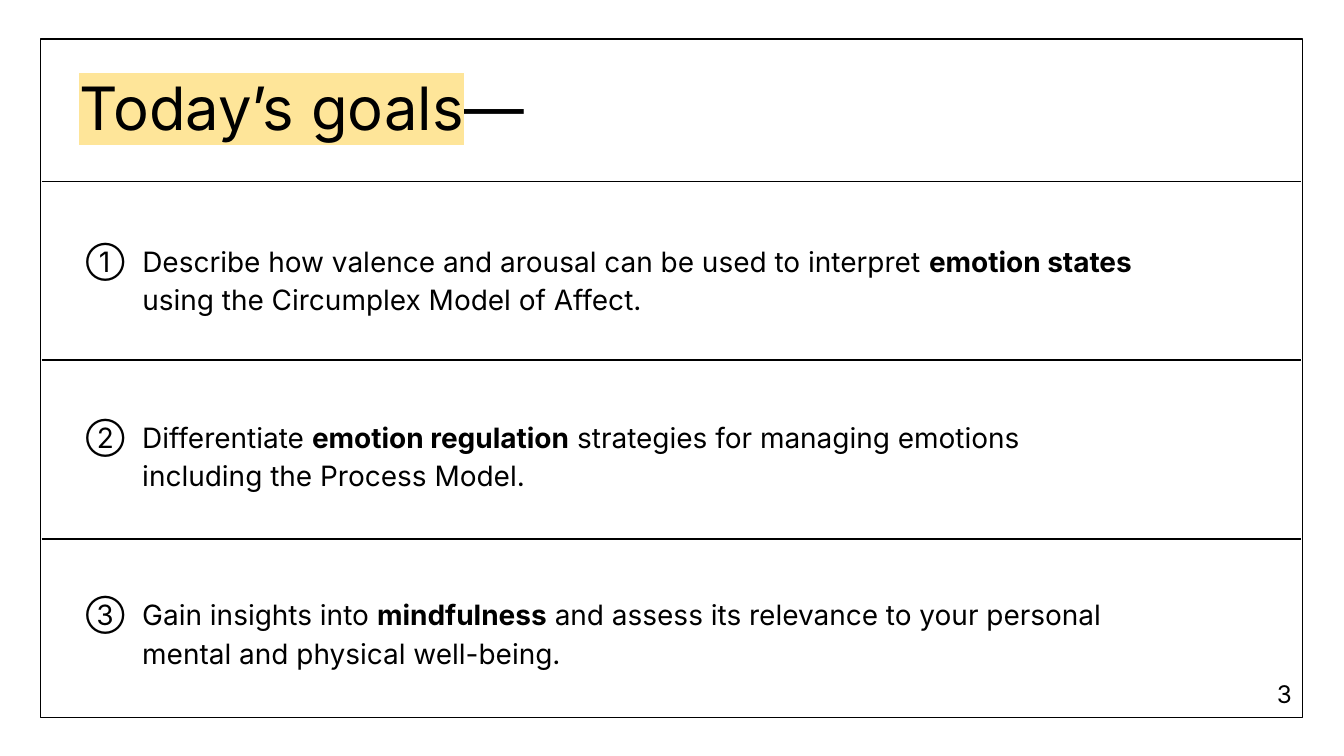
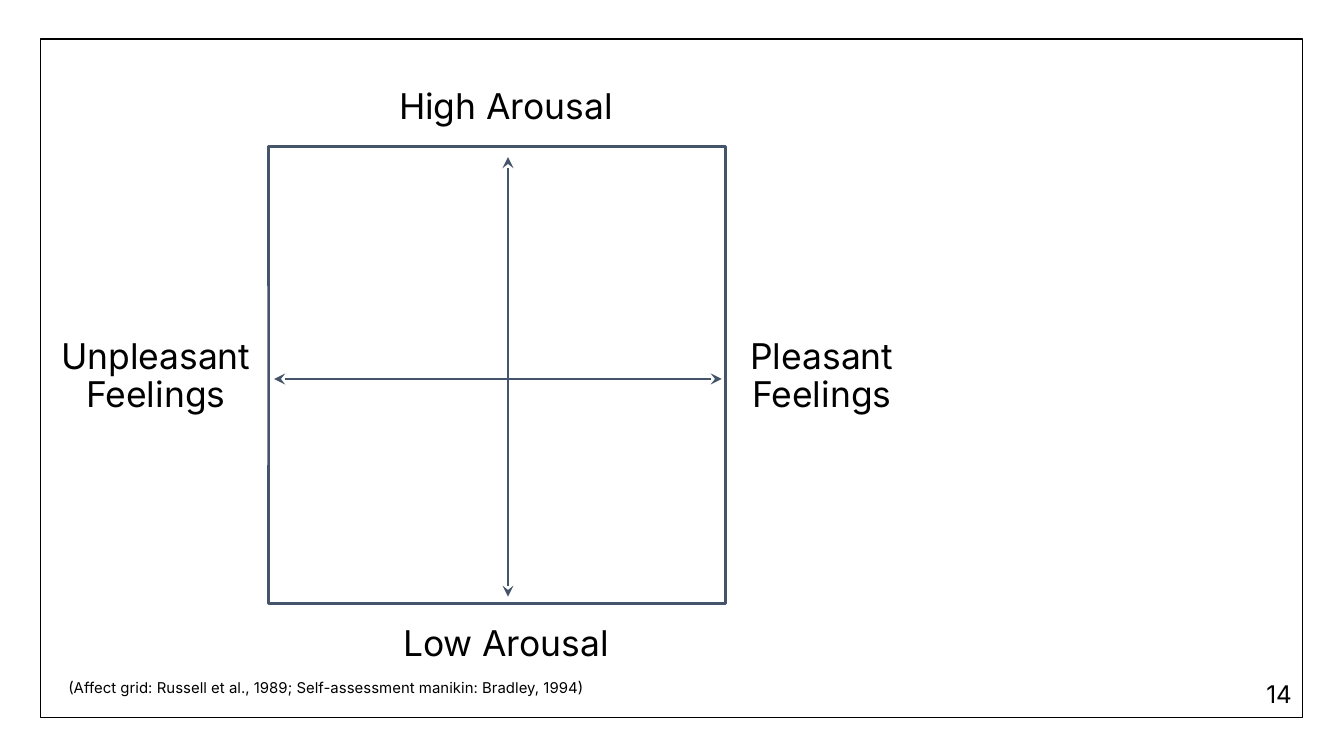
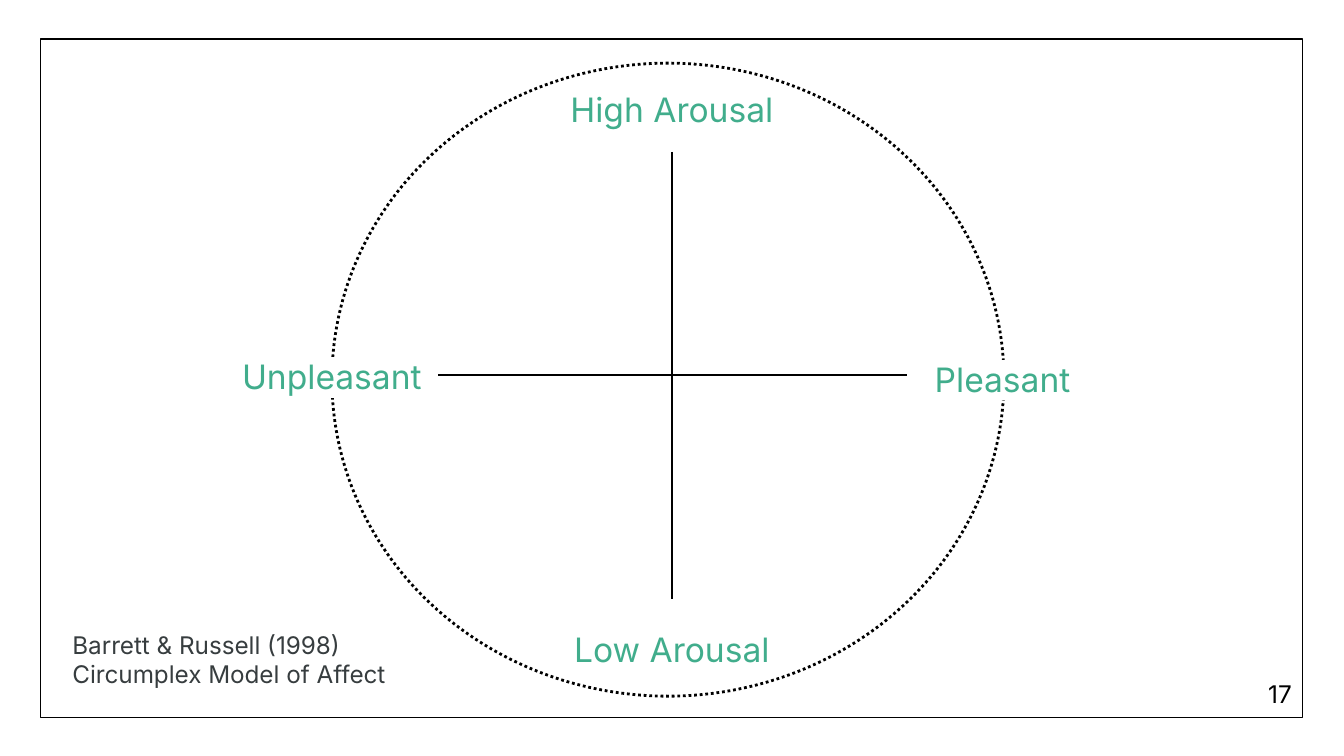
import dataclasses
import pptx
import pptx.dml.color
import pptx.enum.dml
import pptx.enum.shapes
import pptx.enum.text
import pptx.oxml.ns
import pptx.util
from lxml import etree

Inches = pptx.util.Inches
Shapes = pptx.enum.shapes.MSO_SHAPE
Align = pptx.enum.text.PP_ALIGN
Anchor = pptx.enum.text.MSO_ANCHOR
qn = pptx.oxml.ns.qn


@dataclasses.dataclass(frozen=True)
class Theme:
    font: str = "Inter"
    ink: str = "000000"
    paper: str = "FFFFFF"
    slate: str = "44546A"
    green: str = "41AD8C"
    gray: str = "373D3F"
    marker: str = "FEE599"
    title: int = 32
    axis: int = 19
    circle_label: int = 18
    goal: int = 15
    small: int = 13
    source: int = 8
    thin: float = 0.75
    thick: float = 1.5


@dataclasses.dataclass(frozen=True)
class Box:
    left: float
    top: float
    width: float
    height: float

    def inner(self, left, top, width, height):
        return Box(self.left + left, self.top + top, width, height)

    def lengths(self):
        return [Inches(n) for n in (self.left, self.top, self.width, self.height)]


@dataclasses.dataclass(frozen=True)
class Run:
    text: str
    bold: bool = False
    highlight: str = ""


THEME = Theme()
FRAME = Box(0.3, 0.29, 9.39, 5.05)
GOALS = [
    (0.33, 8.51, 0.68, [[
        Run("①\tDescribe how valence and arousal can be used to interpret "),
        Run("emotion states ", bold=True),
        Run("using the Circumplex Model of Affect."),
    ]]),
    (0.31, 7.94, 0.84, [
        [
            Run("②\tDifferentiate "),
            Run("emotion regulation", bold=True),
            Run(" strategies for managing emotions"),
        ],
        [Run("including the Process Model.")],
    ]),
    (0.3, 8.07, 0.84, [
        [
            Run("③\tGain insights into "),
            Run("mindfulness", bold=True),
            Run(" and assess its relevance to your personal"),
        ],
        [Run("mental and physical well-being.")],
    ]),
]


def rgb(color):
    return pptx.dml.color.RGBColor.from_string(color)


def add_panel(slide, box, fill=None, line=None, weight=THEME.thin, kind=Shapes.RECTANGLE):
    panel = slide.shapes.add_shape(kind, *box.lengths())
    panel.shadow.inherit = False
    if fill:
        panel.fill.solid()
        panel.fill.fore_color.rgb = rgb(fill)
    else:
        panel.fill.background()
    if line:
        panel.line.color.rgb = rgb(line)
        panel.line.width = pptx.util.Pt(weight)
    else:
        panel.line.fill.background()
    return panel


def add_rule(slide, x1, y1, x2, y2, color=THEME.ink, weight=THEME.thin, arrows=False):
    rule = slide.shapes.add_connector(
        pptx.enum.shapes.MSO_CONNECTOR.STRAIGHT, *[Inches(n) for n in (x1, y1, x2, y2)]
    )
    rule.line.color.rgb = rgb(color)
    rule.line.width = pptx.util.Pt(weight)
    if arrows:
        outline = rule.line._get_or_add_ln()
        for end in ("a:headEnd", "a:tailEnd"):
            etree.SubElement(outline, qn(end), type="stealth")
    etree.SubElement(rule._element.spPr, qn("a:effectLst"))


def add_run(paragraph, part, size, color):
    run = paragraph.add_run()
    run.text = part.text
    run.font.size = pptx.util.Pt(size)
    run.font.bold = part.bold
    run.font.color.rgb = rgb(color)
    if part.highlight:
        properties = run.font._element
        highlight = etree.Element(qn("a:highlight"))
        etree.SubElement(highlight, qn("a:srgbClr"), val=part.highlight)
        properties.find(qn("a:solidFill")).addnext(highlight)
    run.font.name = THEME.font


def write(holder, lines, size, color=THEME.ink, align=Align.LEFT, spacing=1.0,
          anchor=Anchor.TOP, insets=(0.1, 0.1), hang=0):
    frame = holder.text_frame
    frame.word_wrap = True
    frame.vertical_anchor = anchor
    frame.margin_left = frame.margin_right = Inches(insets[0])
    frame.margin_top = frame.margin_bottom = Inches(insets[1])
    paragraph = frame.paragraphs[0]
    paragraph.alignment = align
    paragraph.line_spacing = spacing
    if hang:
        properties = paragraph._p.get_or_add_pPr()
        properties.set("marL", str(Inches(hang)))
        properties.set("indent", str(-Inches(hang)))
    for number, line in enumerate(lines):
        if number:
            paragraph.add_line_break()
        for part in line:
            add_run(paragraph, part, size, color)
    return frame


def add_text(slide, box, lines, size, **style):
    return write(slide.shapes.add_textbox(*box.lengths()), lines, size, **style)


def add_framed_slide(deck):
    slide = deck.slides.add_slide(deck.slide_layouts[6])
    add_panel(slide, FRAME, THEME.paper, THEME.ink)
    return slide


def add_page_number(slide, box, number):
    corner = box.inner(box.width - 0.58, box.height - 0.4, 0.6, 0.43)
    add_text(slide, corner, [[Run(str(number))]], THEME.small,
             align=Align.RIGHT, anchor=Anchor.BOTTOM)


def build_goals(slide, box):
    title = [Run("Today’s goals", highlight=THEME.marker), Run("—")]
    add_text(slide, box.inner(0.22, 0.26, 9, 0.55), [title], THEME.title,
             spacing=0.9, insets=(0.07, 0.04))
    for row, (drop, width, height, lines) in enumerate(GOALS):
        top = 1.06 + 1.33 * row
        y = box.top + top
        add_rule(slide, box.left + 0.01, y, box.left + box.width - 0.01, y)
        add_text(slide, box.inner(0.24, top + drop, width, height), lines, THEME.goal,
                 spacing=1.15, hang=0.42)


def build_affect_grid(slide, box):
    add_panel(slide, box, line=THEME.slate, weight=THEME.thick)
    poles = [
        (box.inner(3.42, 1.04, 1.39, 1.33), ["Pleasant", "Feelings"], 0.39),
        (box.inner(-1.67, 1.04, 1.66, 1.33), ["Unpleasant", "Feelings"], 0.39),
        (box.inner(0.29, -0.53, 2.95, 0.49), ["High Arousal"], 0.1),
        (box.inner(0.29, 3.47, 2.95, 0.49), ["Low Arousal"], 0.1),
    ]
    for place, words, top_inset in poles:
        label = write(add_panel(slide, place, THEME.paper), [[Run(word)] for word in words],
                      THEME.axis, align=Align.CENTER, spacing=0.9)
        label.margin_top = Inches(top_inset)
    center_x, center_y = box.left + 1.78, box.top + 1.73
    axis = dict(color=THEME.slate, weight=THEME.thick, arrows=True)
    add_rule(slide, box.left + 0.04, center_y, box.left + 3.37, center_y, **axis)
    add_rule(slide, center_x, box.top + 0.08, center_x, box.top + 3.35, **axis)
    citation = "(Affect grid: Russell et al., 1989; Self-assessment manikin: Bradley, 1994)"
    add_text(slide, box.inner(-1.59, 3.86, 4.13, 0.34), [[Run(citation)]], THEME.source,
             spacing=1.15)


def build_circumplex(slide, box):
    circle = add_panel(slide, box, line=THEME.ink, weight=THEME.thick, kind=Shapes.OVAL)
    circle.line.dash_style = pptx.enum.dml.MSO_LINE.ROUND_DOT
    for gap in (box.inner(0.46, 2.24, 4.19, 0.22), box.inner(1.84, 0.23, 0.78, 4.25)):
        add_panel(slide, gap, THEME.paper, THEME.paper)
    center_x, center_y = box.left + 2.53, box.top + 2.32
    add_rule(slide, center_x, box.top + 0.66, center_x, box.top + 3.99)
    add_rule(slide, box.left + 0.79, center_y, box.left + 4.28, center_y)
    reference = [[Run("Barrett & Russell (1998)")], [Run("Circumplex Model of Affect")]]
    add_text(slide, box.inner(-2.03, 4.12, 2.99, 0.58), reference, THEME.small,
             color=THEME.gray)
    poles = [
        ("High Arousal", 1.53, 0.09, 2, 0.37),
        ("Low Arousal", 1.53, 4.11, 2, 0.37),
        ("Unpleasant", -0.83, 2.08, 1.66, 0.46),
        ("Pleasant", 4.23, 2.1, 1.52, 0.46),
    ]
    for word, *place in poles:
        add_text(slide, box.inner(*place), [[Run(word, highlight=THEME.paper)]],
                 THEME.circle_label, color=THEME.green, align=Align.CENTER)


def main():
    deck = pptx.Presentation()
    deck.slide_width = Inches(10)
    deck.slide_height = Inches(10 * 9 / 16)
    pages = [
        (3, build_goals, FRAME),
        (14, build_affect_grid, Box(2, 1.09, 3.4, 3.4)),
        (17, build_circumplex, Box(2.47, 0.47, 5, 4.71)),
    ]
    for number, build, box in pages:
        slide = add_framed_slide(deck)
        build(slide, box)
        add_page_number(slide, FRAME, number)
    deck.save("out.pptx")


if __name__ == "__main__":
    main()
